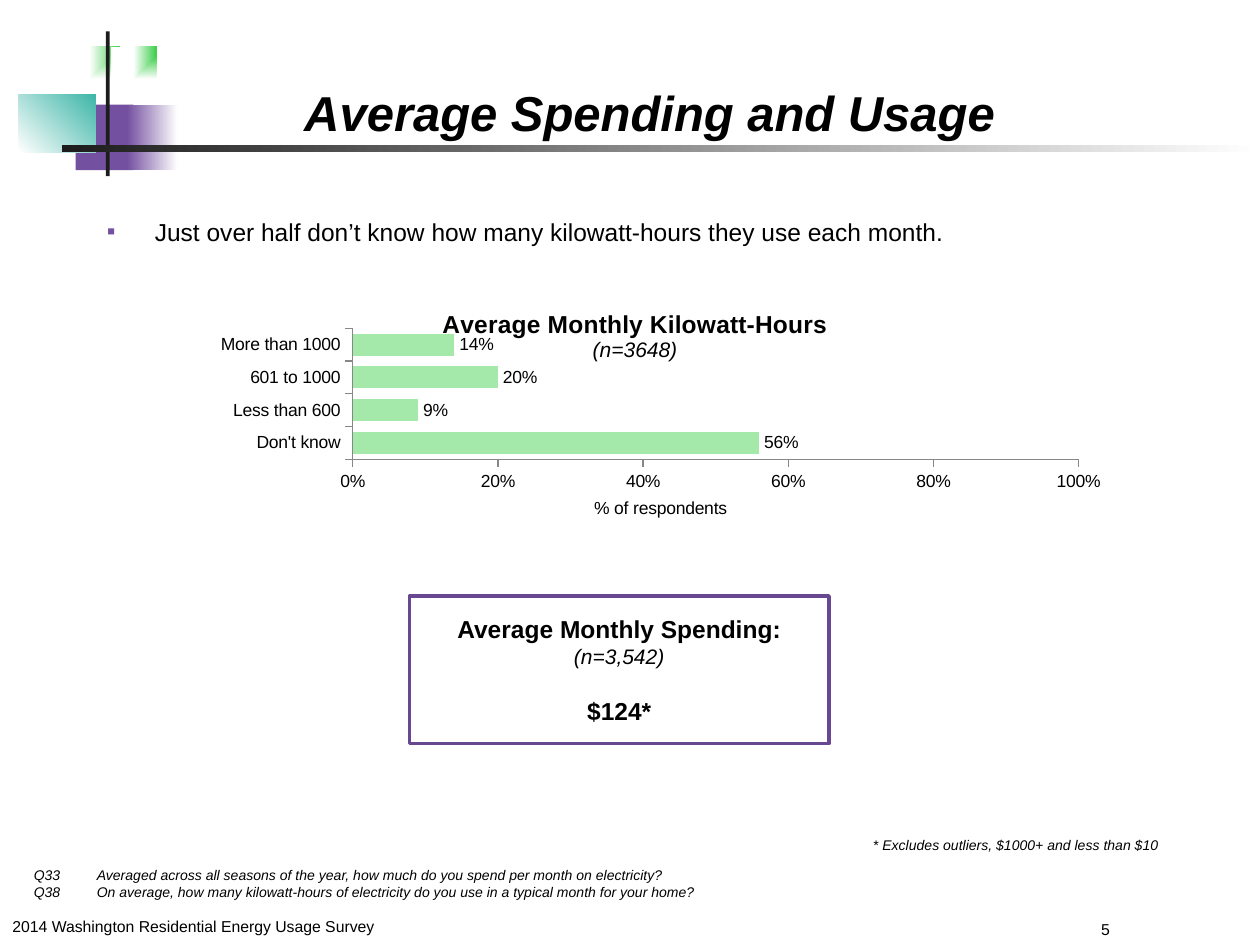
from pptx import Presentation
from pptx.chart.data import CategoryChartData as Data
from pptx.dml.color import RGBColor as Rgb
from pptx.enum.chart import XL_CHART_TYPE as Kind, XL_LABEL_POSITION as Spot
from pptx.enum.chart import XL_TICK_MARK as Tick
from pptx.enum.shapes import MSO_SHAPE as Form
from pptx.enum.text import MSO_ANCHOR as Anchor, PP_ALIGN as Align
from pptx.oxml.ns import qn
from pptx.util import Inches, Pt
from lxml.etree import SubElement as Sub

HUES = {
    "ink": "000000", "white": "FFFFFF", "dark": "1C1C1C", "green": "3FCF4D",
    "violet": "7450A0", "teal": "3EB6A8", "edge": "684891", "bar": "A4E8AA",
    "axis": "878787",
}
WIDE, HIGH = Inches(10), Inches(7.5)

HEAD = {"size": Pt(14), "bold": True}
BASE = {"size": Pt(12), "bold": False, "italic": True}
NOTE = {"size": Pt(8), "italic": True}
FOOT = {"size": Pt(9)}
AXIS = {"size": Pt(10), "bold": False}


def hue(name):
    return Rgb.from_string(HUES[name])


def box(x, y, w, h):
    """Turn percent shares of the slide into a left, top, width, height."""
    return [int(part * full / 100)
            for part, full in zip((x, y, w, h), (WIDE, HIGH) * 2)]


def style(font, form):
    for key, value in {"name": "Arial", **form}.items():
        setattr(font, key, value)
    font.color.rgb = hue("ink")


def write(frame, lines, align=None):
    """Fill a frame with (text, format) lines and return its paragraphs."""
    for num, (text, form) in enumerate(lines):
        para = frame.add_paragraph() if num else frame.paragraphs[0]
        para.alignment = align
        run = para.add_run()
        run.text = text
        style(run.font, form)
    return frame.paragraphs


def add_text(slide, place, lines, align=None, anchor=Anchor.TOP):
    frame = slide.shapes.add_textbox(*box(*place)).text_frame
    frame.word_wrap = True
    frame.vertical_anchor = anchor
    return write(frame, lines, align)


def set_tab(para):
    tabs = Sub(para._p.get_or_add_pPr(), qn("a:tabLst"))
    Sub(tabs, qn("a:tab"), pos=str(Inches(0.5)), algn="l")


def set_bullet(para, mark, name):
    props = para._p.get_or_add_pPr()
    dent = Inches(0.38)
    props.set("marL", str(dent))
    props.set("indent", str(-dent))
    Sub(Sub(props, qn("a:buClr")), qn("a:srgbClr"), val=HUES[name])
    Sub(props, qn("a:buFont"), typeface="Arial")
    Sub(props, qn("a:buChar"), char=mark)


def add_block(slide, place, *names, angle=0, corner=False):
    """Draw a borderless block; two names give a gradient, corner a radial one."""
    shape = slide.shapes.add_shape(Form.RECTANGLE, *box(*place))
    shape.shadow.inherit = False
    shape.line.fill.background()
    fill = shape.fill
    if len(names) == 1:
        fill.solid()
        fill.fore_color.rgb = hue(names[0])
        return
    fill.gradient()
    fill.gradient_angle = angle
    for stop, name, where in zip(fill.gradient_stops, names, (0, 1)):
        stop.color.rgb = hue(name)
        stop.position = where
    if corner:
        grad = shape._element.spPr.find(qn("a:gradFill"))
        grad.remove(grad.find(qn("a:lin")))
        ring = Sub(grad, qn("a:path"), {"path": "rect"})
        Sub(ring, qn("a:fillToRect"), l="100000", b="100000")


def add_emblem(slide):
    for x, w in ((4.7, 4.8), (8.8, 3.6)):
        add_block(slide, (x, 4.93, w, 6.93), "green", "white", corner=True)
    add_block(slide, (6, 11.07, 4.6, 6.93), "violet")
    add_block(slide, (10.1, 11.07, 4, 6.93), "violet", "white")
    add_block(slide, (1.5, 10, 6.1, 6.13), "white", "teal", angle=45)
    add_block(slide, (8.4, 3.33, 0.3, 15.33), "dark")
    add_block(slide, (4.9, 15.33, 95.1, 0.8), "dark", "white")


def set_plot(chart, **sizes):
    """Pin the inner plot area to shares of the chart."""
    area = chart._chartSpace.chart.plotArea
    for old in area.findall(qn("c:layout")):
        area.remove(old)
    lay = Sub(area, qn("c:layout"))
    area.insert(0, lay)
    man = Sub(lay, qn("c:manualLayout"))
    Sub(man, qn("c:layoutTarget"), val="inner")
    for key in "xy":
        Sub(man, qn(f"c:{key}Mode"), val="edge")
    for key, value in sizes.items():
        Sub(man, qn(f"c:{key}"), val=str(value))


def add_bars(slide):
    data = Data(number_format="0%")
    data.categories = ["Don't know", "Less than 600", "601 to 1000",
                       "More than 1000"]
    data.add_series("Series 1", (0.56, 0.09, 0.2, 0.14))
    chart = slide.shapes.add_chart(
        Kind.BAR_CLUSTERED, *box(10.4, 31.07, 80, 24.4), data).chart
    style(chart.font, {"size": Pt(18)})
    chart.has_legend = False
    chart.has_title = True
    write(chart.chart_title.text_frame,
          [("Average Monthly Kilowatt-Hours", HEAD), ("(n=3648)", BASE)],
          Align.CENTER)
    set_plot(chart, x=0.22, y=0.15, w=0.72, h=0.57)

    for axis in (chart.category_axis, chart.value_axis):
        axis.has_major_gridlines = False
        axis.major_tick_mark = Tick.OUTSIDE
        axis.format.line.color.rgb = hue("axis")
        style(axis.tick_labels.font, AXIS)
    scale = chart.value_axis
    form = {"minimum_scale": 0, "maximum_scale": 1, "major_unit": 0.2}
    for key, value in form.items():
        setattr(scale, key, value)
    write(scale.axis_title.text_frame, [("% of respondents", AXIS)])

    plot = chart.plots[0]
    plot.gap_width = 49
    plot.vary_by_categories = False
    fill = plot.series[0].format.fill
    fill.solid()
    fill.fore_color.rgb = hue("bar")
    plot.has_data_labels = True
    tags = plot.data_labels
    form = {"show_value": True, "position": Spot.OUTSIDE_END}
    for key, value in form.items():
        setattr(tags, key, value)
    style(tags.font, AXIS)
    for part in (tags, scale.tick_labels):
        part.number_format = "0%"
        part.number_format_is_linked = False


def add_callout(slide):
    shape = slide.shapes.add_shape(Form.RECTANGULAR_CALLOUT,
                                   *box(32.5, 63.07, 33.3, 15.6))
    shape.shadow.inherit = False
    shape.adjustments[0], shape.adjustments[1] = -0.5, 0.29
    shape.fill.solid()
    shape.fill.fore_color.rgb = hue("white")
    shape.line.color.rgb = hue("edge")
    shape.line.width = Pt(2)
    frame = shape.text_frame
    frame.vertical_anchor = Anchor.MIDDLE
    lines = [("Average Monthly Spending:", HEAD), ("(n=3,542)", BASE),
             ("$124*", HEAD)]
    write(frame, lines, Align.CENTER)[-1].space_before = Pt(16)


def main():
    deck = Presentation()
    deck.slide_width, deck.slide_height = WIDE, HIGH
    slide = deck.slides.add_slide(deck.slide_layouts[6])
    add_emblem(slide)
    add_text(slide, (0, 96.4, 32.5, 3.33),
             [("2014 Washington Residential Energy Usage Survey", FOOT)])
    add_text(slide, (86.4, 96.67, 13.6, 3.2), [("5", FOOT)])
    add_text(slide, (5.6, -1.07, 91.9, 16.67),
             [("Average Spending and Usage",
               {"size": Pt(28), "bold": True, "italic": True})],
             Align.CENTER, Anchor.BOTTOM)
    asks = add_text(slide, (1.7, 91.07, 95, 6.67), [
        ("Q33\tAveraged across all seasons of the year, how much do you "
         "spend per month on electricity?", NOTE),
        ("Q38\tOn average, how many kilowatt-hours of electricity do you "
         "use in a typical month for your home?", NOTE)])
    for para in asks:
        set_tab(para)
    add_bars(slide)
    add_callout(slide)
    point = add_text(slide, (7.5, 22.27, 92.5, 5.6), [
        ("Just over half don’t know how many kilowatt-hours they use "
         "each month.", {"size": Pt(14)})])[0]
    set_bullet(point, "▪", "violet")
    add_text(slide, (68.3, 87.87, 28.8, 3.2),
             [("* Excludes outliers, $1000+ and less than $10", NOTE)])
    deck.save("out.pptx")


if __name__ == "__main__":
    main()
